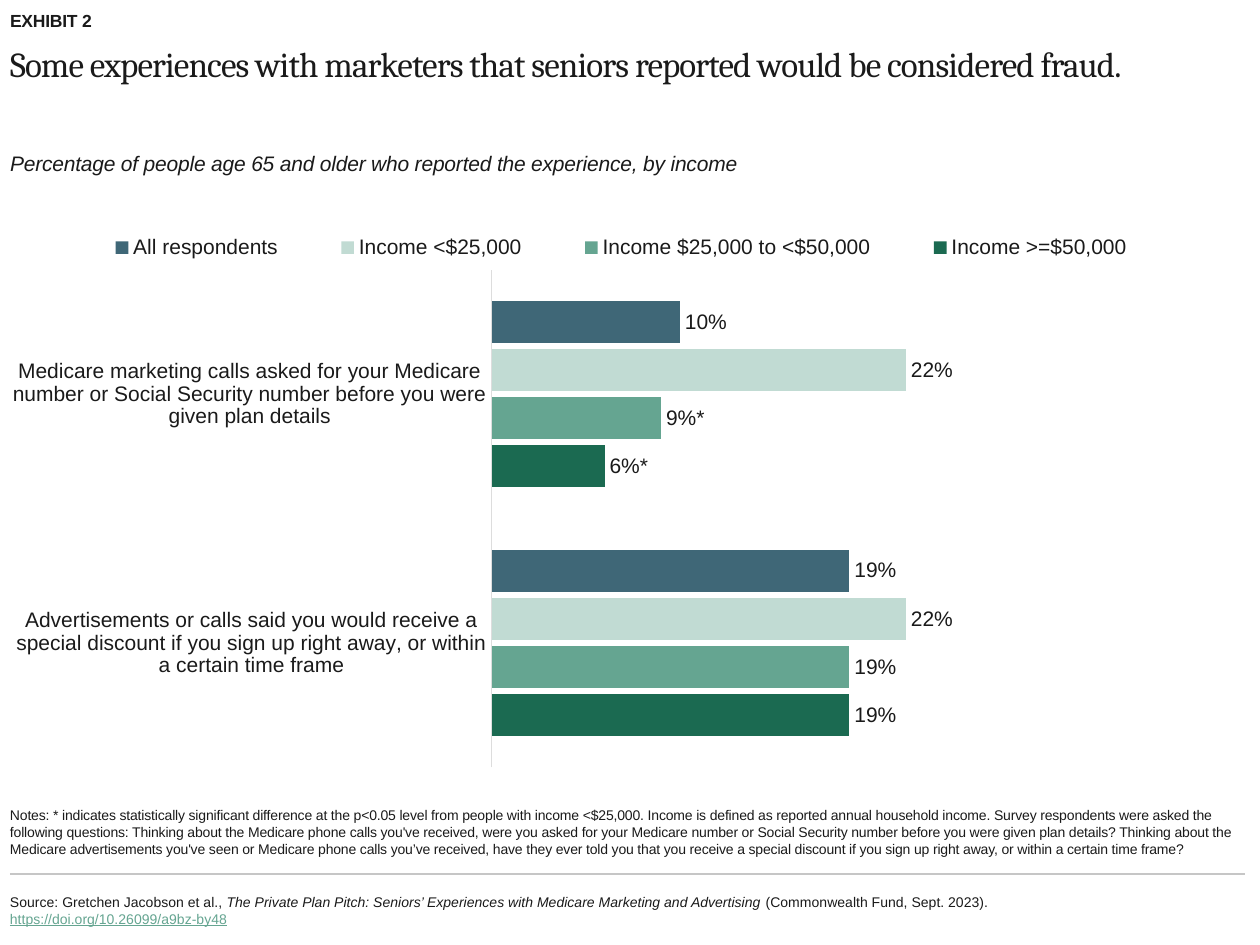
import lxml.etree
import pptx
import pptx.chart.data
import pptx.dml.color
import pptx.enum.chart
import pptx.enum.shapes
import pptx.enum.text
import pptx.oxml
import pptx.oxml.ns
import pptx.util

INK = "1A1A1A"
GREEN = "65A591"
LEFT = 10
ANCHOR = pptx.enum.text.MSO_ANCHOR

TITLE = "Some experiences with marketers that seniors reported would be considered fraud."
NOTES = (
    "Notes: * indicates statistically significant difference at the p<0.05 level from people "
    "with income <$25,000. Income is defined as reported annual household income. Survey "
    "respondents were asked the following questions: Thinking about the Medicare phone calls "
    "you've received, were you asked for your Medicare number or Social Security number before "
    "you were given plan details? Thinking about the Medicare advertisements you've seen or "
    "Medicare phone calls you’ve received, have they ever told you that you receive a special "
    "discount if you sign up right away, or within a certain time frame?"
)
SOURCE = [
    ("Source: Gretchen Jacobson et al., ", {}),
    ("The Private Plan Pitch: Seniors’ Experiences with Medicare Marketing and Advertising",
     {"italic": True}),
    (" (Commonwealth Fund, Sept. 2023). ", {}),
    ("https://doi.org/10.26099/a9bz-by48", {"tint": GREEN, "underline": True}),
]
CATS = [
    "Advertisements or calls said you would receive a special discount if you sign up "
    "right away, or within a certain time frame",
    "Medicare marketing calls asked for your Medicare number or Social Security number "
    "before you were given plan details",
]
# name, values, colour, own label texts by point
SERIES = [
    ("Income >=$50,000", (0.19, 0.06), "1B6A51", {1: "6%*"}),
    ("Income $25,000 to <$50,000", (0.19, 0.09), GREEN, {1: "9%*"}),
    ("Income <$25,000", (0.22, 0.22), "C1DBD3", {}),
    ("All respondents", (0.19, 0.1), "3F6777", {}),
]


def px(n):
    return pptx.util.Emu(round(n * 914400 / 126))


def color(code):
    return pptx.dml.color.RGBColor.from_string(code)


def style(font, size, tint=INK, face="Arial", **flags):
    font.size = pptx.util.Pt(size)
    font.name = face
    font.color.rgb = color(tint)
    for name, value in flags.items():
        setattr(font, name, value)


def track(run, points):
    """Set the letter spacing of a run."""
    run.font._element.set("spc", str(round(points * 100)))


def place(shape, box):
    shape.left, shape.top, shape.width, shape.height = map(px, box)


def setup(frame, anchor):
    frame.word_wrap = True
    frame.auto_size = pptx.enum.text.MSO_AUTO_SIZE.NONE
    frame.vertical_anchor = anchor
    frame.margin_left = frame.margin_top = frame.margin_right = frame.margin_bottom = 0


def add_title(slide):
    title = slide.shapes.title
    place(title, (LEFT, 38, 1240, 94))
    setup(title.text_frame, ANCHOR.TOP)
    title.text_frame.text = TITLE
    para = title.text_frame.paragraphs[0]
    para.alignment = pptx.enum.text.PP_ALIGN.LEFT
    para.line_spacing = 1.1
    style(para.runs[0].font, 20, face="Cambria")
    track(para.runs[0], -0.5)


def add_text(slide, box, parts, size, anchor=ANCHOR.TOP, space=-0.1):
    """Add a text box of one paragraph; parts are (text, font settings) pairs."""
    shape = slide.shapes.add_textbox(*map(px, box))
    setup(shape.text_frame, anchor)
    para = shape.text_frame.paragraphs[0]
    for text, look in parts:
        run = para.add_run()
        run.text = text
        style(run.font, size, **look)
        if space:
            track(run, space)


def add_rule(slide, top):
    rule = slide.shapes.add_connector(
        pptx.enum.shapes.MSO_CONNECTOR.STRAIGHT, px(LEFT), px(top), px(1245), px(top))
    rule.line.color.rgb = color("C6C6C6")
    rule.line.width = pptx.util.Pt(0.75)
    lxml.etree.SubElement(rule._element.spPr, pptx.oxml.ns.qn("a:effectLst"))


def layout(x, y, w, h, inner=False):
    """Make a manual chart layout from shares of the chart size."""
    target = '<c:layoutTarget val="inner"/>' if inner else ""
    sizes = "".join(f'<c:{k} val="{v}"/>' for k, v in zip("xywh", (x, y, w, h)))
    return pptx.oxml.parse_xml(
        f'<c:layout {pptx.oxml.ns.nsdecls("c")}><c:manualLayout>{target}'
        f'<c:xMode val="edge"/><c:yMode val="edge"/>{sizes}</c:manualLayout></c:layout>')


def set_layout(parent, new, index):
    for old in parent.findall(pptx.oxml.ns.qn("c:layout")):
        parent.remove(old)
    parent.insert(index, new)


def format_bars(plot):
    end = pptx.enum.chart.XL_LABEL_POSITION.OUTSIDE_END
    plot.gap_width, plot.overlap = 150, -15
    plot.vary_by_categories = False
    for bars, (_, _, tint, marks) in zip(plot.series, SERIES):
        bars.format.fill.solid()
        bars.format.fill.fore_color.rgb = color(tint)
        labels = bars.data_labels
        labels.show_value = True
        labels.number_format, labels.number_format_is_linked = "0%", False
        labels.position = end
        style(labels.font, 12)
        for index, text in marks.items():
            label = bars.points[index].data_label
            label.text_frame.text = text
            style(label.text_frame.paragraphs[0].runs[0].font, 12)
            label.position = end


def format_axes(chart):
    cat, val = chart.category_axis, chart.value_axis
    cat.major_tick_mark = pptx.enum.chart.XL_TICK_MARK.NONE
    cat.format.line.color.rgb = color("DDDDDD")
    cat.format.line.width = pptx.util.Pt(0.75)
    style(cat.tick_labels.font, 12)
    val.minimum_scale, val.maximum_scale, val.major_unit = 0, 0.4, 0.1
    val.has_major_gridlines = False
    val.visible = False


def add_chart(slide, box):
    data = pptx.chart.data.CategoryChartData(number_format="0%")
    data.categories = CATS
    for name, values, _, _ in SERIES:
        data.add_series(name, values)
    chart = slide.shapes.add_chart(
        pptx.enum.chart.XL_CHART_TYPE.BAR_CLUSTERED, *map(px, box), data).chart
    style(chart.font, 10)
    chart.has_title = False
    chart.has_legend = True
    legend = chart.legend
    legend.position = pptx.enum.chart.XL_LEGEND_POSITION.TOP
    legend.include_in_layout = False
    style(legend.font, 12)
    set_layout(legend._element, layout(0.04, 0.02, 0.91, 0.06), 1)
    area = chart._chartSpace.chart.plotArea
    set_layout(area, layout(0.39, 0.09, 0.61, 0.9, inner=True), 0)
    format_bars(chart.plots[0])
    format_axes(chart)


def main():
    deck = pptx.Presentation()
    deck.slide_width, deck.slide_height = px(1260), px(945)
    slide = deck.slides.add_slide(deck.slide_layouts[5])
    add_title(slide)
    add_text(slide, (LEFT, 10, 1240, 25), [("EXHIBIT 2", {"bold": True})], 10)
    add_text(slide, (LEFT, 151, 1240, 32),
             [("Percentage of people age 65 and older who reported the experience, by income",
               {"italic": True})], 12)
    add_chart(slide, (LEFT, 220, 1235, 553))
    add_text(slide, (LEFT, 788, 1235, 69), [(NOTES, {})], 8, ANCHOR.BOTTOM)
    add_rule(slide, 874)
    add_text(slide, (LEFT, 881, 983, 58), SOURCE, 8, ANCHOR.MIDDLE, space=0)
    deck.save("out.pptx")


if __name__ == "__main__":
    main()
